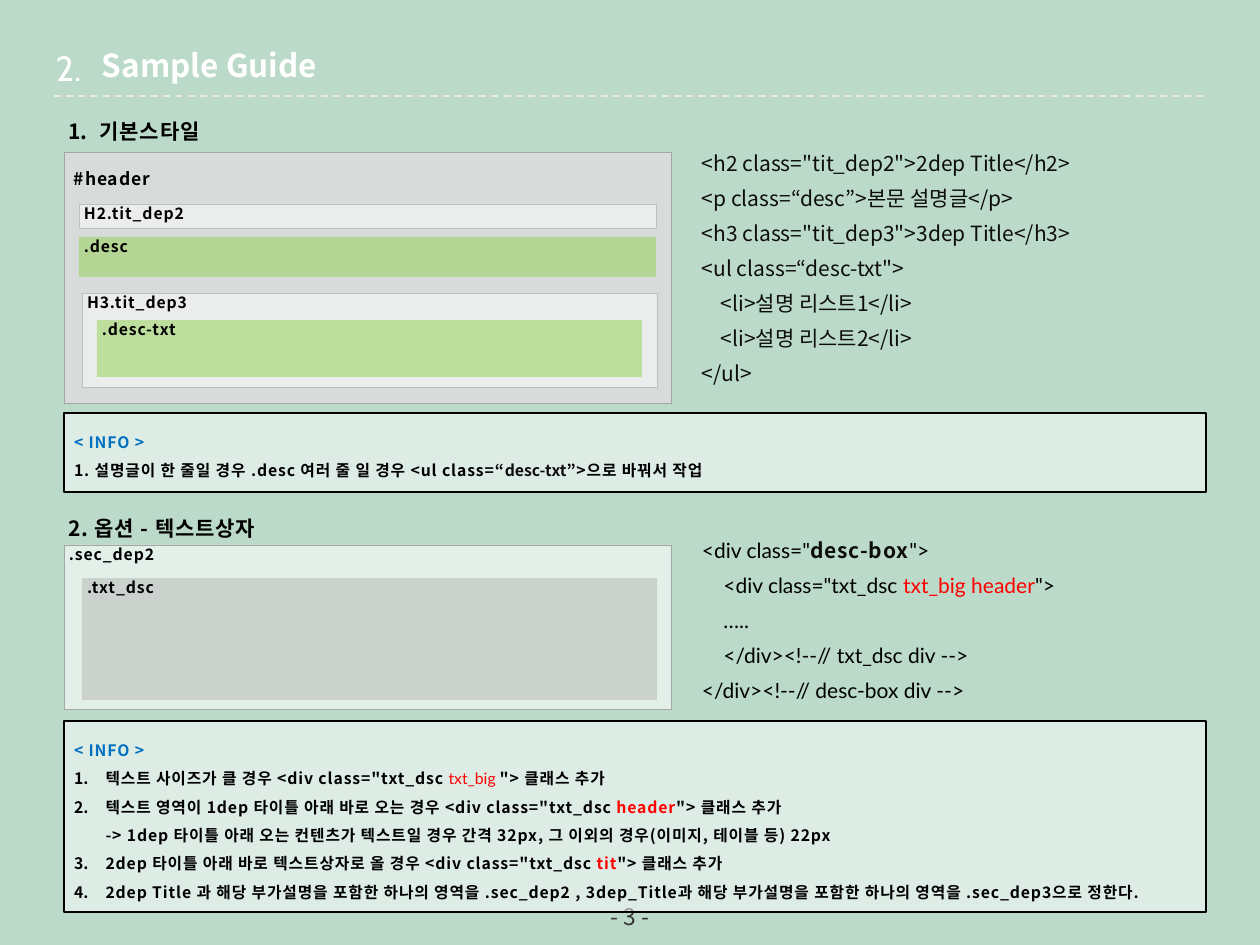
from collections import namedtuple
from lxml import etree
from pptx import Presentation
from pptx.dml.color import RGBColor
from pptx.enum.dml import MSO_LINE
from pptx.enum.shapes import MSO_CONNECTOR, MSO_SHAPE
from pptx.enum.text import MSO_ANCHOR, MSO_AUTO_SIZE, PP_ALIGN
from pptx.oxml.ns import qn
from pptx.util import Pt

RECT, LINE = MSO_SHAPE.RECTANGLE, MSO_CONNECTOR.STRAIGHT
DASH, FIXED = MSO_LINE.DASH, MSO_AUTO_SIZE.NONE
TOP, MIDDLE = MSO_ANCHOR.TOP, MSO_ANCHOR.MIDDLE
LEFT, CENTER = PP_ALIGN.LEFT, PP_ALIGN.CENTER

MINT = RGBColor(0xBB, 0xDA, 0xCA)
CREAM = RGBColor(0xEC, 0xE9, 0xDA)
WHITE = RGBColor(0xFF, 0xFF, 0xFF)
BLACK = RGBColor(0, 0, 0)
INK = RGBColor(0x0D, 0x0D, 0x0D)
DARK = RGBColor(0x33, 0x33, 0x33)
BLUE = RGBColor(0x00, 0x70, 0xC0)
RED = RGBColor(0xFF, 0, 0)
GREEN = RGBColor(0x92, 0xD0, 0x50)
PALE = RGBColor(0xDD, 0xDD, 0xDD)
GREY = RGBColor(0xB5, 0xB5, 0xB5)
EDGE = RGBColor(0xA6, 0xA6, 0xA6)
SOFT = RGBColor(0xBF, 0xBF, 0xBF)

NOTO, LATO, CABIN = "Noto Sans CJK KR", "Lato", "Cabin"
Style = namedtuple("Style", "size font color bold gap", defaults=(False, 0))
LABEL = Style(9, NOTO, BLACK, True, 0.5)
INFO = LABEL._replace(color=BLUE)
MARK = LABEL._replace(color=RED)
HEAD = LABEL._replace(size=12)
CODE = Style(12, NOTO, INK)
MONO = Style(12, LATO, BLACK)
HOT = MONO._replace(color=RED)

PAD = (13, 6, 13, 6)
TAG = (5, 0, 0, 0)
NOTE = (10, 10, 10, 0)


def px(n):
    return round(n * 914400 / 126)


def add_run(para, text, style):
    run = para.add_run()
    run.text = text
    font = run.font
    font.size, font.bold = Pt(style.size), style.bold
    font.color.rgb, font.name = style.color, style.font
    props = run._r.get_or_add_rPr()
    props.set("spc", str(int(style.gap * 100)))
    etree.SubElement(props, qn("a:ea"), typeface=style.font)


def number(para):
    props = para._p.get_or_add_pPr()
    props.set("marL", "228600")
    props.set("indent", "-228600")
    etree.SubElement(props, qn("a:buFont"), typeface=NOTO)
    etree.SubElement(props, qn("a:buAutoNum"), type="arabicPeriod")


def write(shape, paras, pad=PAD, space=None, align=LEFT, anchor=TOP, first=None):
    """Fill a shape; paragraphs from index `first` on are numbered."""
    frame = shape.text_frame
    frame.word_wrap, frame.auto_size = True, FIXED
    frame.vertical_anchor = anchor
    (frame.margin_left, frame.margin_top,
     frame.margin_right, frame.margin_bottom) = map(px, pad)
    for i, runs in enumerate(paras):
        para = frame.paragraphs[0] if i == 0 else frame.add_paragraph()
        if first is not None and i >= first:
            number(para)
        para.alignment = align
        if space:
            para.line_spacing = space
        for text, style in runs:
            if text == "\n":
                para.add_line_break()
            else:
                add_run(para, text, style)


def add_text(slide, box, paras, **opts):
    write(slide.shapes.add_textbox(*map(px, box)), paras, **opts)


def add_panel(slide, box, fill, alpha, edge, paras, width=0.25, **opts):
    shape = slide.shapes.add_shape(RECT, *map(px, box))
    shape.shadow.inherit = False
    shape.fill.solid()
    shape.fill.fore_color.rgb = fill
    color = shape._element.spPr.find(".//" + qn("a:srgbClr"))
    etree.SubElement(color, qn("a:alpha"), val=str(alpha * 1000))
    if edge is None:
        shape.line.fill.background()
    else:
        shape.line.color.rgb, shape.line.width = edge, Pt(width)
    write(shape, paras, **opts)


def add_label(slide, box, fill, alpha, edge, text):
    add_panel(slide, box, fill, alpha, edge, [[(text, LABEL)]], pad=TAG)


def add_note(slide, top, high, paras, first=None):
    add_panel(slide, (64, top, 1142, high), WHITE, 50, BLACK,
              [[("< INFO >", INFO)]] + paras, width=0.75,
              pad=NOTE, space=1.5, first=first)


def add_rule(slide):
    rule = slide.shapes.add_connector(LINE, px(54), px(96), px(1206), px(96))
    rule.line.color.rgb, rule.line.width = CREAM, Pt(1)
    rule.line.dash_style = DASH
    etree.SubElement(rule._element.spPr, qn("a:effectLst"))


def add_title(slide):
    title = slide.shapes.title
    title.left, title.top, title.width, title.height = map(px, (89, 40, 581, 51))
    write(title, [[("Sample Guide", Style(18, NOTO, WHITE, True))]])
    add_text(slide, (34, 40, 69, 55), [[("2.", Style(20, CABIN, WHITE))]],
             align=CENTER)


def add_basic(slide):
    add_text(slide, (63, 106, 260, 33), [[("기본스타일", HEAD)]],
             pad=TAG, space=1.5, first=0)
    add_panel(slide, (64, 152, 607, 251), PALE, 85, EDGE,
              [[("#header", LABEL._replace(size=10))]], pad=(10, 16, 0, 0))
    for item in (
        ((82, 293, 575, 94), WHITE, 50, SOFT, "H3.tit_dep3"),
        ((79, 204, 577, 24), WHITE, 50, SOFT, "H2.tit_dep2"),
        ((97, 320, 545, 57), GREEN, 50, None, ".desc-txt"),
        ((79, 237, 577, 40), GREEN, 50, None, ".desc"),
    ):
        add_label(slide, *item)
    code = ('<h2 class="tit_dep2">2dep Title</h2>',
            '<p class=“desc”>본문 설명글</p>',
            '<h3 class="tit_dep3">3dep Title</h3>',
            '<ul class=“desc-txt">',
            '    <li>설명 리스트1</li>',
            '    <li>설명 리스트2</li>',
            '</ul>')
    add_text(slide, (689, 135, 486, 260), [[(row, CODE)] for row in code],
             space=Pt(20))
    add_note(slide, 413, 79, [[
        ("1. 설명글이 한 줄일 경우 .desc 여러 줄 일 경우 <ul class=“", LABEL),
        ("desc-txt", LABEL._replace(color=INK, gap=0)),
        ("”>으로 바꿔서 작업", LABEL)]])


def add_option(slide):
    add_text(slide, (63, 503, 320, 38), [[("2. 옵션 - 텍스트상자", HEAD)]],
             pad=TAG, space=1.5)
    add_label(slide, (64, 545, 607, 164), WHITE, 60, EDGE, ".sec_dep2")
    add_label(slide, (82, 578, 575, 122), GREY, 50, None, ".txt_dsc")
    add_text(slide, (689, 522, 486, 189), [
        [('<div class="', MONO),
         ("desc-box", HEAD._replace(color=INK)), ('">', MONO)],
        [('    <div class="txt_dsc ', MONO),
         ("txt_big header", HOT), ('">', MONO)],
        [("    …..", MONO)],
        [("    </div><!--// txt_dsc div -->", MONO)],
        [("</div><!--// desc-box div -->", MONO)],
    ], space=Pt(20))
    tail = ('"> 클래스 추가', LABEL)
    add_note(slide, 721, 191, [
        [('텍스트 사이즈가 클 경우 <div class="txt_dsc ', LABEL),
         ("txt_big ", HOT._replace(size=9)), tail],
        [('텍스트 영역이 1dep 타이틀 아래 바로 오는 경우 <div class="txt_dsc ', LABEL),
         ("header", MARK), tail, ("\n", LABEL),
         ("-> 1dep 타이틀 아래 오는 컨텐츠가 텍스트일 경우 간격 32px, "
          "그 이외의 경우(이미지, 테이블 등) 22px", LABEL)],
        [('2dep 타이틀 아래 바로 텍스트상자로 올 경우 <div class="txt_dsc ', LABEL),
         ("tit", MARK), tail],
        [("2dep Title 과 해당 부가설명을 포함한 하나의 영역을 .sec_dep2 , "
          "3dep_Title과 해당 부가설명을 포함한 하나의 영역을 .sec_dep3으로 정한다.",
          LABEL)],
    ], first=1)


def main():
    deck = Presentation()
    deck.slide_width, deck.slide_height = px(1260), px(945)
    slide = deck.slides.add_slide(deck.slide_layouts[5])
    slide.background.fill.solid()
    slide.background.fill.fore_color.rgb = MINT

    # Page number and header
    add_text(slide, (483, 897, 294, 39), [[("- 3 -", Style(13, NOTO, DARK))]],
             pad=(0, 0, 0, 0), align=CENTER, anchor=MIDDLE)
    add_rule(slide)
    add_title(slide)

    # Sections
    add_basic(slide)
    add_option(slide)
    deck.save("out.pptx")


if __name__ == "__main__":
    main()
